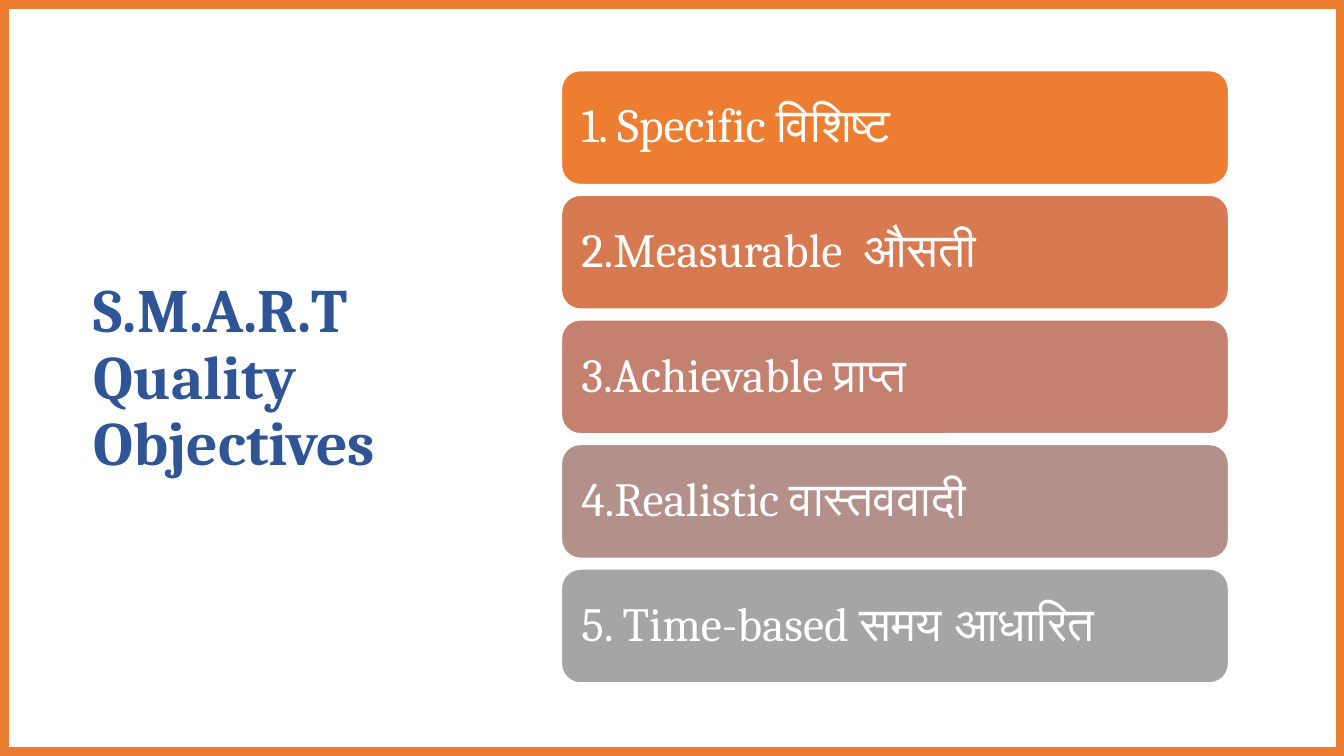
from typing import NamedTuple

from pptx import Presentation
from pptx.dml.color import RGBColor
from pptx.enum.shapes import MSO_SHAPE as Preset
from pptx.enum.text import MSO_ANCHOR as Anchor, MSO_AUTO_SIZE as AutoSize, PP_ALIGN as Align
from pptx.shapes.autoshape import Shape
from pptx.slide import Slide
from pptx.text.text import _Paragraph as Paragraph
from pptx.util import Cm, Pt

ORANGE = RGBColor(0xED, 0x7D, 0x31)
TERRACOTTA = RGBColor(0xD8, 0x7A, 0x51)
ROSE = RGBColor(0xC4, 0x81, 0x70)
MAUVE = RGBColor(0xB4, 0x90, 0x8B)
GRAY = RGBColor(0xA5, 0xA5, 0xA5)
BLUE = RGBColor(0x2F, 0x55, 0x97)
WHITE = RGBColor(0xFF, 0xFF, 0xFF)

LATIN_FONT = "Cambria"
HINDI_FONT = "Calibri"

SLIDE_WIDTH, SLIDE_HEIGHT = 33.87, 19.05
FRAME_WIDTH, FRAME_BORDER = 33.91, 0.21
BAR_LEFT, BAR_TOP = 14.15, 1.78
BAR_WIDTH, BAR_HEIGHT, BAR_PITCH = 16.81, 2.87, 3.14
BAR_INSET = Cm(0.36)


class Objective(NamedTuple):
    english: str
    hindi: str
    color: RGBColor


OBJECTIVES = [
    Objective("1. Specific ", "विशिष्ट", ORANGE),
    Objective("2.Measurable  ", "औसती", TERRACOTTA),
    Objective("3.Achievable ", "प्राप्त", ROSE),
    Objective("4.Realistic ", "वास्तववादी", MAUVE),
    Objective("5. Time-based ", "समय आधारित", GRAY),
]


def add_run(paragraph: Paragraph, text: str, font: str, size: int,
            color: RGBColor, bold: bool = False) -> None:
    run = paragraph.add_run()
    run.text = text
    run.font.name = font
    run.font.size = Pt(size)
    run.font.bold = bold
    run.font.color.rgb = color


def paint(shape: Shape, fill: RGBColor, line: RGBColor) -> None:
    shape.shadow.inherit = False
    shape.fill.solid()
    shape.fill.fore_color.rgb = fill
    shape.line.color.rgb = line
    shape.line.width = Pt(1)


def add_frame(slide: Slide) -> Shape:
    near = Cm(FRAME_BORDER)
    right, bottom = Cm(FRAME_WIDTH), Cm(SLIDE_HEIGHT)
    builder = slide.shapes.build_freeform(0, 0)
    builder.add_line_segments([(right, 0), (right, bottom), (0, bottom)])
    # The opening runs the other way round, so it stays empty
    builder.move_to(near, near)
    builder.add_line_segments([
        (near, bottom - near), (right - near, bottom - near), (right - near, near)])
    frame = builder.convert_to_shape()
    paint(frame, ORANGE, ORANGE)
    return frame


def format_title(title: Shape) -> None:
    title.left, title.top = Cm(2.11), Cm(2.39)
    title.width, title.height = Cm(9.58), Cm(14.33)
    text_frame = title.text_frame
    text_frame.word_wrap = True
    text_frame.auto_size = AutoSize.NONE
    text_frame.vertical_anchor = Anchor.MIDDLE
    paragraph = text_frame.paragraphs[0]
    paragraph.alignment = Align.LEFT
    paragraph.line_spacing = 0.9
    add_run(paragraph, "S.M.A.R.T", LATIN_FONT, 44, BLUE, bold=True)
    paragraph.add_line_break()
    add_run(paragraph, "Quality Objectives", LATIN_FONT, 44, BLUE, bold=True)


def add_bar(slide: Slide, index: int, objective: Objective) -> None:
    bar = slide.shapes.add_shape(
        Preset.ROUNDED_RECTANGLE, Cm(BAR_LEFT), Cm(BAR_TOP + index * BAR_PITCH),
        Cm(BAR_WIDTH), Cm(BAR_HEIGHT))
    paint(bar, objective.color, WHITE)
    text_frame = bar.text_frame
    text_frame.word_wrap = True
    text_frame.vertical_anchor = Anchor.MIDDLE
    text_frame.margin_left = text_frame.margin_right = BAR_INSET
    text_frame.margin_top = text_frame.margin_bottom = BAR_INSET
    paragraph = text_frame.paragraphs[0]
    paragraph.alignment = Align.LEFT
    paragraph.line_spacing = 0.9
    add_run(paragraph, objective.english, LATIN_FONT, 34, WHITE)
    add_run(paragraph, objective.hindi, HINDI_FONT, 34, WHITE)


def main() -> None:
    presentation = Presentation()
    presentation.slide_width = Cm(SLIDE_WIDTH)
    presentation.slide_height = Cm(SLIDE_HEIGHT)
    slide = presentation.slides.add_slide(presentation.slide_layouts.get_by_name("Title Only"))

    # Orange frame behind the title
    title = slide.shapes.title
    title.element.addprevious(add_frame(slide).element)
    format_title(title)

    # Five objectives
    for index, objective in enumerate(OBJECTIVES):
        add_bar(slide, index, objective)

    presentation.save("out.pptx")


if __name__ == "__main__":
    main()
